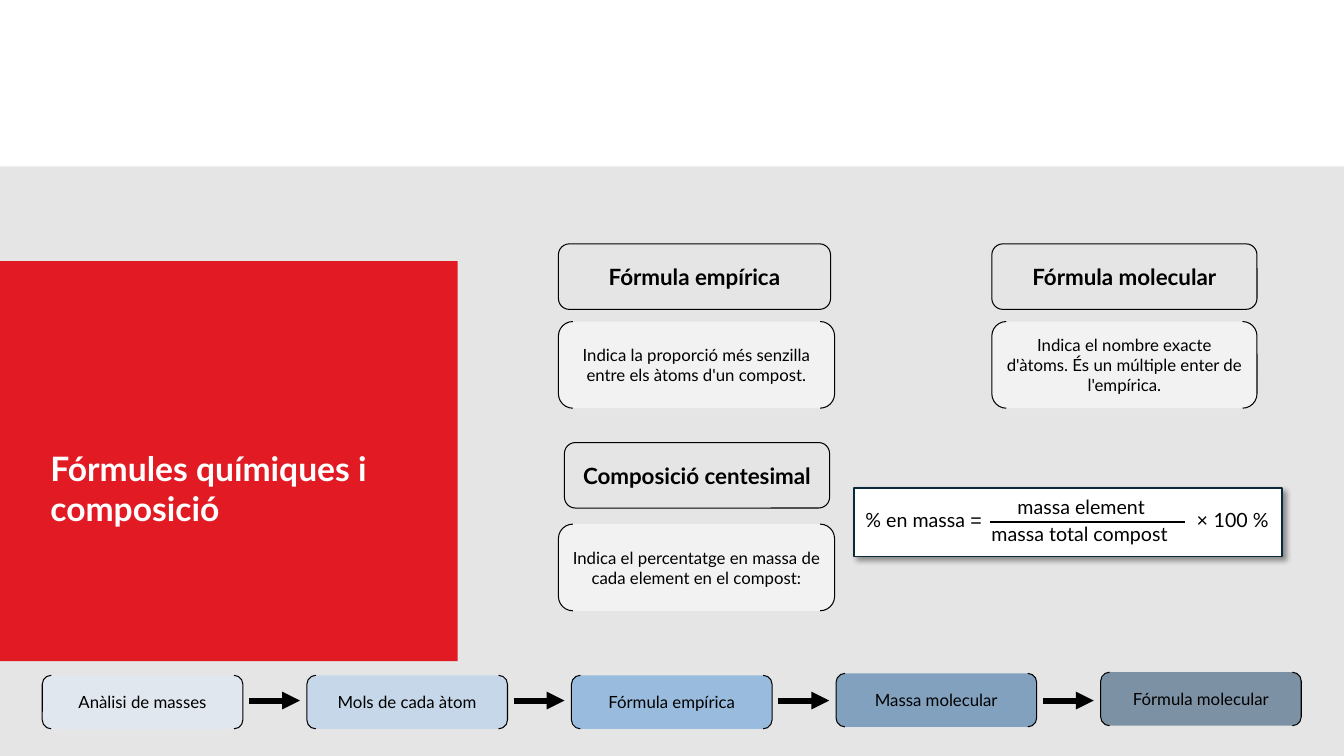
import pptx
import pptx.util
import pptx.dml.color
import pptx.enum.shapes
import pptx.enum.text
import pptx.oxml
import pptx.oxml.ns

Pt = pptx.util.Pt
Kind = pptx.enum.shapes.MSO_SHAPE
Align = pptx.enum.text.PP_ALIGN
Anchor = pptx.enum.text.MSO_ANCHOR
NS = 'xmlns:a="http://schemas.openxmlformats.org/drawingml/2006/main"'


def paint(target, color):
    target.rgb = pptx.dml.color.RGBColor.from_string(color)


def make(xml):
    return pptx.oxml.parse_xml(xml.replace("{ns}", NS))


def write(frame, *runs, size=12, color="000000", bold=False,
          align=Align.CENTER, anchor=Anchor.MIDDLE):
    frame.word_wrap = True
    frame.vertical_anchor = anchor
    para = frame.paragraphs[0]
    para.alignment = align
    for text, font in runs:
        run = para.add_run()
        run.text = text
        run.font.name = font
        run.font.size = Pt(size)
        run.font.bold = bold
        paint(run.font.color, color)


def place(shape, left, top, width, height):
    shape.left, shape.top = Pt(left), Pt(top)
    shape.width, shape.height = Pt(width), Pt(height)


def block(shapes, kind, area, fill=None, alpha=None, line=None, weight=0.75):
    shape = shapes.add_shape(kind, *map(Pt, area))
    shape.shadow.inherit = False
    if fill:
        shape.fill.solid()
        paint(shape.fill.fore_color, fill)
    else:
        shape.fill.background()
    if alpha:
        tone = shape._element.spPr.find(pptx.oxml.ns.qn("a:solidFill"))[0]
        tone.append(make('<a:alpha {ns} val="%d"/>' % (alpha * 1000)))
    if line:
        paint(shape.line.color, line)
        shape.line.width = Pt(weight)
    else:
        shape.line.fill.background()
    return shape


def header(shapes, text, area):
    box = block(shapes, Kind.ROUNDED_RECTANGLE, area, line="000000")
    write(box.text_frame, (text, "Lato"), size=16, bold=True)


def bracket(shapes, text, area, fill="FFFFFF"):
    box = block(shapes, Kind.DOUBLE_BRACKET, area, fill, 50, "000000")
    write(box.text_frame, (text, "Lato"))


def rule(shapes, start, end, level, weight, arrow=False):
    line = shapes.add_connector(
        pptx.enum.shapes.MSO_CONNECTOR.STRAIGHT,
        Pt(start), Pt(level), Pt(end), Pt(level))
    paint(line.line.color, "000000")
    line.line.width = Pt(weight)
    if arrow:
        line.line._get_or_add_ln().append(
            make('<a:tailEnd {ns} type="triangle"/>'))
    line._element.spPr.append(make('<a:effectLst {ns}/>'))


def ratio(shapes):
    group = shapes.add_group_shape().shapes
    card = block(group, Kind.RECTANGLE, (609.8, 348.5, 306, 49),
                 "FFFFFF", line="092A39", weight=1.25)
    effect = card._element.spPr.find(pptx.oxml.ns.qn("a:effectLst"))
    effect.append(make(
        '<a:outerShdw {ns} blurRad="50800" dist="38100" dir="2700000" '
        'algn="tl" rotWithShape="0"><a:srgbClr val="000000">'
        '<a:alpha val="40000"/></a:srgbClr></a:outerShdw>'))
    parts = [
        ((609.8, 357.8, 102.2, 27.4), ("% en massa ", "Lato"), ("=", "Arial")),
        ((718.6, 351.4, 118.8, 21.6), ("massa element", "Lato")),
        ((699.8, 367.2, 156.2, 27.4), ("massa total compost", "Lato")),
        ((846.7, 360.7, 74.2, 21.6), ("× ", "Arial"), ("100 %", "Lato")),
    ]
    for area, *runs in parts:
        part = block(group, Kind.ROUNDED_RECTANGLE, area)
        write(part.text_frame, *runs, size=14, align=Align.LEFT)
    rule(group, 707, 846.7, 373, 1)


def flow(shapes):
    steps = [
        ("Anàlisi de masses", "DCEAF7", 482.4),
        ("Mols de cada àtom", "A6CAEC", 482.4),
        ("Fórmula empírica", "4E95D9", 482.4),
        ("Massa molecular", "215F9A", 481),
        ("Fórmula molecular", "163E64", 480.2),
    ]
    pitch = 189
    for i, (text, fill, top) in enumerate(steps):
        bracket(shapes, text, (30.2 + i * pitch, top, 143.3, 38.2), fill)
    for i in range(len(steps) - 1):
        start = 177.9 + i * pitch
        rule(shapes, start, start + 36.4, 500.4, 4.25, arrow=True)


def main():
    deck = pptx.Presentation()
    deck.slide_width, deck.slide_height = Pt(960), Pt(540)
    slide = deck.slides.add_slide(deck.slide_layouts[5])
    shapes = slide.shapes

    block(shapes, Kind.RECTANGLE, (0, 118.8, 960, 421.2), "E5E5E5")
    block(shapes, Kind.RECTANGLE, (0, 186.5, 326.9, 285.8), "E21A23")

    title = shapes.title
    shapes._spTree.append(title._element)
    place(title, 28.8, 316.1, 253.4, 65.5)
    write(title.text_frame, ("Fórmules químiques i composició", "Lato"),
          size=24, color="FFFFFF", bold=True,
          align=Align.LEFT, anchor=Anchor.TOP)
    title.text_frame.auto_size = pptx.enum.text.MSO_AUTO_SIZE.SHAPE_TO_FIT_TEXT

    header(shapes, "Fórmula empírica", (398.9, 174.2, 194.4, 46.8))
    header(shapes, "Fórmula molecular", (708.5, 174.2, 189.4, 46.8))
    header(shapes, "Composició centesimal", (403.2, 316.1, 189.4, 46.8))
    bracket(shapes, "Indica la proporció més senzilla entre els àtoms "
            "d'un compost.", (398.9, 229.7, 197.3, 61.9))
    bracket(shapes, "Indica el nombre exacte d'àtoms. És un múltiple enter "
            "de l'empírica.", (708.5, 229.7, 189.4, 61.9))
    bracket(shapes, "Indica el percentatge en massa de cada element en el "
            "compost:", (398.9, 374.4, 197.3, 61.9))
    ratio(shapes)
    flow(shapes)
    deck.save("out.pptx")


if __name__ == "__main__":
    main()
